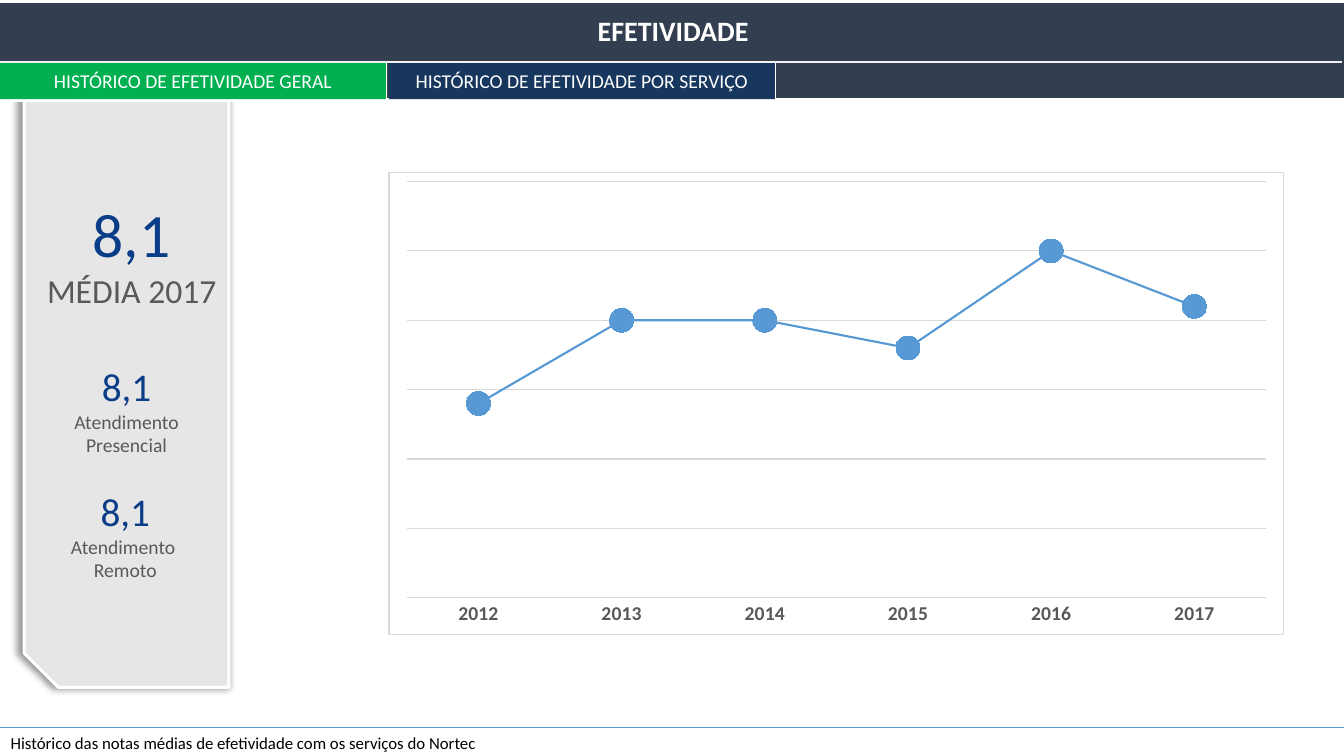
from lxml.etree import SubElement
from pptx import Presentation
from pptx.chart.data import CategoryChartData
from pptx.dml.color import RGBColor
from pptx.enum.chart import (XL_CHART_TYPE, XL_LABEL_POSITION,
                             XL_MARKER_STYLE, XL_TICK_LABEL_POSITION, XL_TICK_MARK)
from pptx.enum.shapes import MSO_CONNECTOR, MSO_SHAPE
from pptx.enum.text import MSO_ANCHOR, MSO_AUTO_SIZE, PP_ALIGN
from pptx.oxml import parse_xml
from pptx.oxml.ns import nsdecls, qn
from pptx.util import Cm, Pt

# Content
FONT = "Calibri"
TITLE = "EFETIVIDADE"
NOTE = "Histórico das notas médias de efetividade com os serviços do Nortec"
TABS = [("HISTÓRICO DE EFETIVIDADE GERAL", "00B050"),
        ("HISTÓRICO DE EFETIVIDADE POR SERVIÇO", "17375E")]
# left, top, height, score size, label size, score, label lines
SCORES = [(0.74, 4.82, 3.18, 44, 24, "8,1", ["MÉDIA 2017"]),
          (0.61, 9.01, 3.84, 28, 14, "8,1", ["Atendimento Presencial"]),
          (0.58, 12.16, 3.84, 28, 14, "8,1", ["Atendimento ", "Remoto"])]
YEARS = ["2012", "2013", "2014", "2015", "2016", "2017"]
MEANS = [7.4, 8, 8, 7.8, 8.5, 8.1]

# Measures in centimetres
WIDE, HIGH = 33.87, 19.05
TAB_TOP, TAB_W, TAB_H, TAB_STEP = 1.56, 9.73, 0.94, 9.8
BAR_END = 2.52
FOOT = 18.34
# Plot area as shares of the chart
AREA = {"x": 0.02, "y": 0.02, "w": 0.96, "h": 0.9}

deck = Presentation()
deck.slide_width, deck.slide_height = Cm(WIDE), Cm(HIGH)
slide = deck.slides.add_slide(deck.slide_layouts[5])
shapes = slide.shapes


def tint(code):
    return RGBColor.from_string(code)


def place(*nums):
    return [Cm(n) for n in nums]


def style(para, size, color, align=PP_ALIGN.CENTER, bold=False):
    para.alignment = align
    font = para.font
    font.name, font.size, font.bold = FONT, Pt(size), bold
    font.color.rgb = tint(color)


def block(kind, box, fill):
    part = shapes.add_shape(kind, *place(*box))
    part.shadow.inherit = False
    part.fill.solid()
    part.fill.fore_color.rgb = tint(fill)
    part.line.fill.background()
    return part


def rule(x1, y1, x2, y2, color, width):
    line = shapes.add_connector(MSO_CONNECTOR.STRAIGHT, *place(x1, y1, x2, y2))
    line.line.color.rgb = tint(color)
    line.line.width = Pt(width)
    SubElement(line.element.spPr, qn("a:effectLst"))


def label(box, items, align=PP_ALIGN.CENTER):
    frame = shapes.add_textbox(*place(*box)).text_frame
    frame.word_wrap = True
    for i, (text, size, color) in enumerate(items):
        para = frame.add_paragraph() if i else frame.paragraphs[0]
        para.text = text
        style(para, size, color, align)


# Side panel, snipped at the lower left
panel = block(MSO_SHAPE.SNIP_1_RECTANGLE, (0.61, 2.46, 5.16, 14.86), "E7E6E6")
panel.line.color.rgb = tint("FFFFFF")
panel.line.width = Pt(2.25)
props = panel.element.spPr
props.xfrm.set("flipH", "1")
props.xfrm.set("flipV", "1")
glow = SubElement(props.find(qn("a:effectLst")), qn("a:outerShdw"),
                  blurRad=str(Pt(5)), dist="0", sx="102000", algn="ctr",
                  rotWithShape="0")
black = SubElement(glow, qn("a:srgbClr"), val="000000")
SubElement(black, qn("a:alpha"), val="40000")

# Header bar and title
bar = block(MSO_SHAPE.RECTANGLE, (0, 0.08, WIDE, 2.46), "333F50")
title = shapes.title
title.left, title.top, title.width, title.height = place(0.03, 0.22, WIDE, 1.12)
head = title.text_frame
head.text = TITLE
head.auto_size = MSO_AUTO_SIZE.NONE
head.vertical_anchor = MSO_ANCHOR.TOP
style(head.paragraphs[0], 20, "FFFFFF", bold=True)
bar.element.addnext(title.element)

# Footer and lower edge of the header
rule(0, FOOT, WIDE, FOOT, "5B9BD5", 0.5)
rule(0, BAR_END, WIDE, BAR_END, "FFFFFF", 3)
label((0.02, FOOT, WIDE, 0.76), [(NOTE, 12, "000000")], PP_ALIGN.LEFT)

# Tabs, each closed by a thin white line
for i, (text, fill) in enumerate(TABS):
    left = i * TAB_STEP
    tab = block(MSO_SHAPE.RECTANGLE, (left, TAB_TOP, TAB_W, TAB_H), fill)
    tab.text_frame.vertical_anchor = MSO_ANCHOR.MIDDLE
    tab.text_frame.text = text
    style(tab.text_frame.paragraphs[0], 14, "FFFFFF")
    edge = left + TAB_W
    rule(edge, TAB_TOP, edge, BAR_END, "FFFFFF", 0.5)
rule(0, TAB_TOP, 33.83, TAB_TOP, "F2F2F2", 1)

# Scores on the panel
for left, top, high, big, small, score, lines in SCORES:
    label((left, top, 5.16, high), [(score, big, "093D88")]
          + [(line, small, "595959") for line in lines])

# Chart of yearly means
data = CategoryChartData(number_format="0.0")
data.categories = YEARS
data.add_series("Efetividade", MEANS)
chart = shapes.add_chart(XL_CHART_TYPE.LINE_MARKERS,
                         *place(9.79, 4.33, 22.58, 11.68), data).chart
chart.has_legend = chart.has_title = False
chart.font.name, chart.font.size = FONT, Pt(10)
chart.font.color.rgb = tint("000000")
frame = parse_xml(
    f'<c:spPr {nsdecls("c", "a")}>'
    '<a:solidFill><a:srgbClr val="FFFFFF"/></a:solidFill>'
    '<a:ln w="9525"><a:solidFill><a:srgbClr val="D9D9D9"/></a:solidFill></a:ln>'
    '</c:spPr>')
chart.element.find(qn("c:txPr")).addprevious(frame)

# Fixed inner plot area
zone = chart.element.find(".//" + qn("c:plotArea"))
for old in zone.findall(qn("c:layout")):
    zone.remove(old)
sides = "".join(f'<c:{key} val="{val}"/>' for key, val in AREA.items())
zone.insert(0, parse_xml(
    f'<c:layout {nsdecls("c")}><c:manualLayout><c:layoutTarget val="inner"/>'
    f'<c:xMode val="edge"/><c:yMode val="edge"/>{sides}'
    '</c:manualLayout></c:layout>'))

years = chart.category_axis
years.major_tick_mark = XL_TICK_MARK.NONE
years.tick_label_position = XL_TICK_LABEL_POSITION.NEXT_TO_AXIS
scale = chart.value_axis
scale.minimum_scale, scale.maximum_scale, scale.major_unit = 6, 9, 0.5
scale.has_major_gridlines = True
scale.visible = False
for line in (years.format.line, scale.major_gridlines.format.line):
    line.color.rgb = tint("D9D9D9")
    line.width = Pt(0.75)

plot = chart.plots[0]
plot.vary_by_categories = False
plot.has_data_labels = True
tags = plot.data_labels
tags.show_value = True
tags.position = XL_LABEL_POSITION.CENTER
tags.number_format, tags.number_format_is_linked = "0.0", False
for font, color in ((years.tick_labels.font, "595959"), (tags.font, "5B9BD5")):
    font.name, font.size, font.bold = FONT, Pt(14), True
    font.color.rgb = tint(color)

means = plot.series[0]
means.smooth = False
means.format.line.color.rgb = tint("5698D3")
means.format.line.width = Pt(1.5)
dot = means.marker
dot.style, dot.size = XL_MARKER_STYLE.CIRCLE, 17
dot.format.fill.solid()
dot.format.fill.fore_color.rgb = tint("5698D3")
dot.format.line.color.rgb = tint("5698D3")

deck.save("out.pptx")
